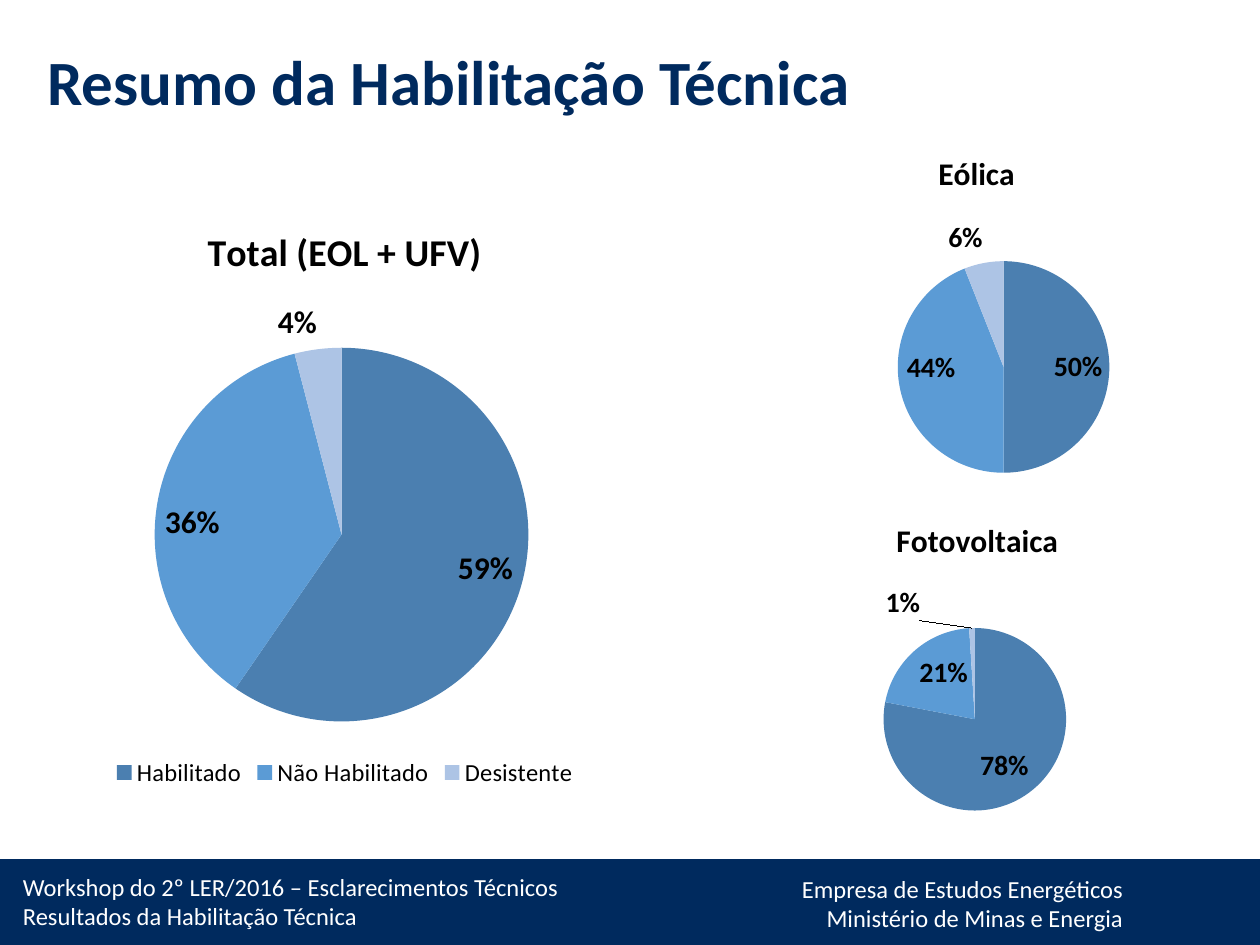
import dataclasses
import typing

import lxml.etree
import pptx
import pptx.chart.chart
import pptx.chart.data
import pptx.dml.color
import pptx.enum.chart
import pptx.enum.shapes
import pptx.enum.text
import pptx.oxml.ns
import pptx.util

Pt = pptx.util.Pt
Align = pptx.enum.text.PP_ALIGN
LabelPosition = pptx.enum.chart.XL_LABEL_POSITION
FONT = "Calibri"
NAVY, WHITE, BLACK = "002A5E", "FFFFFF", "000000"
SLICE_COLOURS = ("4B7FB0", "5B9BD5", "ADC4E5")
CATEGORIES = ("Habilitado", "Não Habilitado", "Desistente")
PERCENT_FORMAT = '0"%"'


class Frame(typing.NamedTuple):
    left: float
    top: float
    width: float
    height: float

    def lengths(self) -> list:
        return [Pt(value) for value in self]


@dataclasses.dataclass
class Pie:
    title: str
    frame: Frame
    plot: Frame
    values: tuple
    title_size: float = 18
    label_size: float = 16
    legend: bool = False
    small_label_shift: float = 0


@dataclasses.dataclass
class Caption:
    frame: Frame
    lines: tuple
    size: float = 14
    colour: str = WHITE
    bold: bool = False
    align: Align = Align.LEFT
    wrap: bool = True
    spacing: float = 1.0


def colour(value: str) -> pptx.dml.color.RGBColor:
    return pptx.dml.color.RGBColor.from_string(value)


def style_font(font, size: float, value: str = BLACK, bold: bool = False) -> None:
    font.name = FONT
    font.size = Pt(size)
    font.bold = bold
    font.color.rgb = colour(value)


def chart_element(tag: str, **values) -> lxml.etree._Element:
    element = lxml.etree.Element(pptx.oxml.ns.qn(f"c:{tag}"))
    for name, value in values.items():
        child = lxml.etree.SubElement(element, pptx.oxml.ns.qn(f"c:{name}"))
        child.set("val", str(value))
    return element


def place_plot(chart: pptx.chart.chart.Chart, plot: Frame) -> None:
    area = chart.element.xpath(".//c:plotArea")[0]
    for old in area.xpath("./c:layout"):
        area.remove(old)
    layout = chart_element("layout")
    layout.append(chart_element(
        "manualLayout", layoutTarget="inner", xMode="edge", yMode="edge",
        x=plot.left, y=plot.top, w=plot.width, h=plot.height))
    area.insert(0, layout)


def style_small_label(chart: pptx.chart.chart.Chart, pie: Pie) -> None:
    label = chart.plots[0].series[0].points[2].data_label
    style_font(label.font, pie.label_size, bold=True)
    label.position = LabelPosition.OUTSIDE_END
    element = chart.element.xpath(".//c:dLbl")[0]
    number_format = chart_element("numFmt")
    number_format.set("formatCode", PERCENT_FORMAT)
    number_format.set("sourceLinked", "0")
    element.insert(1, number_format)
    if pie.small_label_shift:
        layout = chart_element("layout")
        layout.append(chart_element("manualLayout", x=pie.small_label_shift, y=0))
        element.insert(1, layout)


def draw_pie(page, pie: Pie) -> None:
    data = pptx.chart.data.CategoryChartData()
    data.categories = CATEGORIES
    data.add_series(pie.title, pie.values)
    chart = page.shapes.add_chart(
        pptx.enum.chart.XL_CHART_TYPE.PIE, *pie.frame.lengths(), data).chart
    style_font(chart.font, 18)
    chart.has_title = True
    heading = chart.chart_title.text_frame
    heading.text = pie.title
    style_font(heading.paragraphs[0].font, pie.title_size, bold=True)
    chart.chart_title.include_in_layout = False
    chart.has_legend = pie.legend
    if pie.legend:
        chart.legend.position = pptx.enum.chart.XL_LEGEND_POSITION.BOTTOM
        chart.legend.include_in_layout = False
        style_font(chart.legend.font, 14)

    plot = chart.plots[0]
    plot.vary_by_categories = True
    series = plot.series[0]
    for index, value in enumerate(SLICE_COLOURS):
        fill = series.points[index].format.fill
        fill.solid()
        fill.fore_color.rgb = colour(value)
    labels = series.data_labels
    labels.show_value = True
    labels.number_format = PERCENT_FORMAT
    labels.number_format_is_linked = False
    labels.position = LabelPosition.INSIDE_END
    style_font(labels.font, pie.label_size, bold=True)
    style_small_label(chart, pie)
    place_plot(chart, pie.plot)


def draw_caption(page, caption: Caption) -> None:
    frame = page.shapes.add_textbox(*caption.frame.lengths()).text_frame
    frame.word_wrap = caption.wrap
    frame.vertical_anchor = pptx.enum.text.MSO_ANCHOR.MIDDLE
    for index, line in enumerate(caption.lines):
        para = frame.paragraphs[0] if index == 0 else frame.add_paragraph()
        para.text = line
        para.alignment = caption.align
        para.line_spacing = caption.spacing
        style_font(para.font, caption.size, caption.colour, caption.bold)


def draw_footer(page, frame: Frame) -> None:
    band = page.shapes.add_shape(
        pptx.enum.shapes.MSO_SHAPE.RECTANGLE, *frame.lengths())
    band.shadow.inherit = False
    band.fill.solid()
    band.fill.fore_color.rgb = colour(NAVY)
    band.line.color.rgb = colour(NAVY)
    band.line.width = Pt(0.5)


CAPTIONS = (
    Caption(Frame(450, 495.5, 199, 41),
            ("Empresa de Estudos Energéticos", "Ministério de Minas e Energia"),
            align=Align.RIGHT, wrap=False),
    Caption(Frame(6, 494.5, 323, 41),
            ("Workshop do 2º LER/2016 – Esclarecimentos Técnicos",
             "Resultados da Habilitação Técnica")),
    Caption(Frame(20, 21, 674, 55), ("Resumo da Habilitação Técnica",),
            size=36, colour=NAVY, bold=True, spacing=0.9),
)
PIES = (
    Pie("Total (EOL + UFV)", Frame(15, 114, 364, 339),
        Frame(0.2, 0.25, 0.59, 0.63), (59, 36, 4),
        title_size=21.6, label_size=18, legend=True),
    Pie("Eólica", Frame(417, 75.5, 282, 205),
        Frame(0.34, 0.36, 0.43, 0.59), (50, 44, 6)),
    Pie("Fotovoltaica", Frame(417.5, 285, 282, 205),
        Frame(0.31, 0.36, 0.37, 0.51), (78, 21, 1), small_label_shift=-0.14),
)


def main() -> None:
    deck = pptx.Presentation()
    deck.slide_width, deck.slide_height = Pt(720), Pt(540)
    page = deck.slides.add_slide(deck.slide_layouts[6])
    draw_footer(page, Frame(0, 491, 720, 49))
    for caption in CAPTIONS:
        draw_caption(page, caption)
    for pie in PIES:
        draw_pie(page, pie)
    deck.save("out.pptx")


if __name__ == "__main__":
    main()
